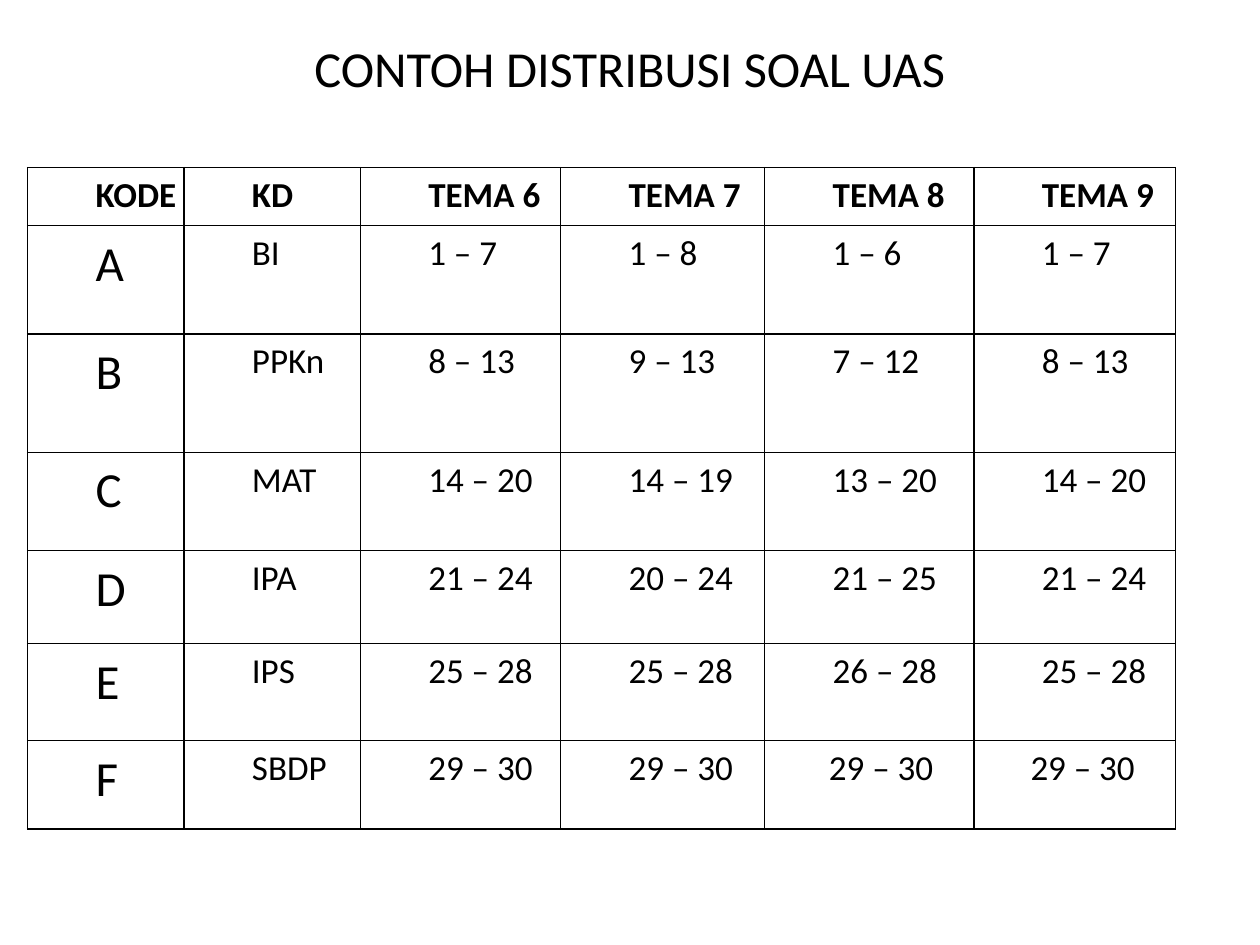
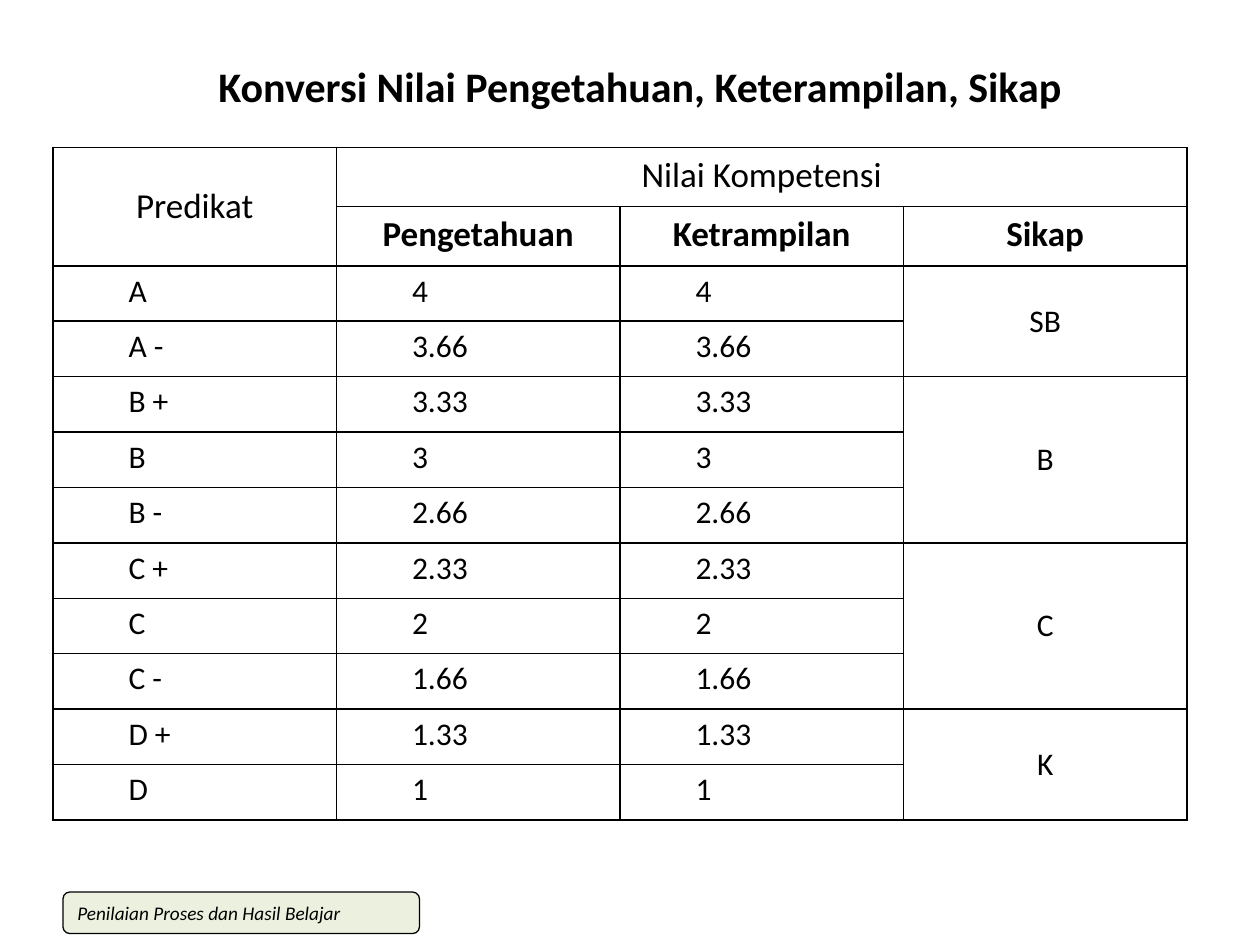
"""Build two slides with tables on exam question distribution and grade conversion."""
from lxml.etree import SubElement
from pptx import Presentation
from pptx.dml.color import RGBColor
from pptx.enum.shapes import MSO_SHAPE as Shape
from pptx.enum.text import MSO_ANCHOR as Anchor, MSO_AUTO_SIZE as AutoSize, PP_ALIGN as Align
from pptx.oxml.ns import qn
from pptx.util import Inches, Pt

FONT = "Calibri"
BLACK = "000000"
PALE_GREEN = "EBF1DE"


def paint(fill, color):
    fill.solid()
    fill.fore_color.rgb = RGBColor.from_string(color)


def write(frame, text, size, bold=False, italic=False, align=Align.LEFT, indent=0, spacing=1.0):
    para = frame.paragraphs[0]
    para.alignment = align
    para.line_spacing = spacing
    properties = para._p.get_or_add_pPr()
    properties.set("marL", str(Inches(indent)))
    properties.set("indent", "0")
    span = para.add_run()
    span.text = text
    span.font.name = FONT
    span.font.size = Pt(size)
    span.font.bold = bold
    span.font.italic = italic
    paint(span.font.fill, BLACK)


deck = Presentation()
deck.slide_width, deck.slide_height = Inches(10), Inches(7.5)

titles = [
    ("CONTOH DISTRIBUSI SOAL UAS", 28.8, False, (0.5, 0.27, 9, 0.53)),
    ("Konversi Nilai Pengetahuan, Keterampilan, Sikap", 24, True, (0.58, 0.33, 9, 0.7)),
]
pages = []
for text, size, bold, place in titles:
    page = deck.slides.add_slide(deck.slide_layouts[5])
    title = page.shapes.title
    title.left, title.top, title.width, title.height = map(Inches, place)
    title.text_frame.auto_size = AutoSize.NONE
    title.text_frame.word_wrap = True
    title.text_frame.vertical_anchor = Anchor.MIDDLE
    write(title.text_frame, text, size, bold, align=Align.CENTER)
    pages.append(page)
distribution_page, conversion_page = pages

distribution = [
    ("KODE", "KD", "TEMA 6", "TEMA 7", "TEMA 8", "TEMA 9"),
    ("A", "BI", "1 – 7", "1 – 8", "1 – 6", "1 – 7"),
    ("B", "PPKn", "8 – 13", "9 – 13", "7 – 12", "8 – 13"),
    ("C", "MAT", "14 – 20", "14 – 19", "13 – 20", "14 – 20"),
    ("D", "IPA", "21 – 24", "20 – 24", "21 – 25", "21 – 24"),
    ("E", "IPS", "25 – 28", "25 – 28", "26 – 28", "25 – 28"),
    ("F", "SBDP", "29 – 30", "29 – 30", "29 – 30", "29 – 30"),
]
shifted_indents = {(6, 4): 0.47, (6, 5): 0.41}
distribution_table = distribution_page.shapes.add_table(
    7, 6, Inches(0.22), Inches(1.33), Inches(9.11), Inches(5.25)).table
for column, width in zip(distribution_table.columns, (1.24, 1.4, 1.59, 1.62, 1.66, 1.6)):
    column.width = Inches(width)
for row, height in zip(distribution_table.rows, (0.46, 0.86, 0.94, 0.78, 0.74, 0.77, 0.7)):
    row.height = Inches(height)
for row, values in enumerate(distribution):
    for column, value in enumerate(values):
        cell = distribution_table.cell(row, column)
        cell.margin_left = cell.margin_right = Inches(0.04)
        cell.margin_top = cell.margin_bottom = 0
        size = 28 if row and column == 0 else 20
        indent = shifted_indents.get((row, column), 0.5)
        write(cell.text_frame, value, size, bold=row == 0, indent=indent, spacing=1.15)

grades = [
    ("A", "4"), ("A -", "3.66"), ("B +", "3.33"), ("B", "3"), ("B -", "2.66"),
    ("C +", "2.33"), ("C", "2"), ("C -", "1.66"), ("D +", "1.33"), ("D", "1"),
]
centred_cells = [
    (0, 0, 2, 1, "Predikat", 20, False),
    (0, 1, 1, 3, "Nilai Kompetensi", 20, False),
    (1, 1, 1, 1, "Pengetahuan", 20, True),
    (1, 2, 1, 1, "Ketrampilan", 20, True),
    (1, 3, 1, 1, "Sikap", 20, True),
    (2, 3, 2, 1, "SB", 18, False),
    (4, 3, 3, 1, "B", 18, False),
    (7, 3, 3, 1, "C", 18, False),
    (10, 3, 2, 1, "K", 18, False),
]
conversion_table = conversion_page.shapes.add_table(
    12, 4, Inches(0.42), Inches(1.17), Inches(9), Inches(5.34)).table
for index, row in enumerate(conversion_table.rows):
    row.height = Inches(0.47 if index < 2 else 0.44)
for row, column, height, width, text, size, bold in centred_cells:
    cell = conversion_table.cell(row, column)
    if height * width > 1:
        cell.merge(conversion_table.cell(row + height - 1, column + width - 1))
    if height > 1:
        cell.vertical_anchor = Anchor.MIDDLE
    write(cell.text_frame, text, size, bold, align=Align.CENTER)
for row, (grade, score) in enumerate(grades, start=2):
    for column, value in enumerate((grade, score, score)):
        write(conversion_table.cell(row, column).text_frame, value, 18, indent=0.5)

for table in (distribution_table, conversion_table):
    for cell in table.iter_cells():
        cell_properties = cell._tc.get_or_add_tcPr()
        for side in ("a:lnL", "a:lnR", "a:lnT", "a:lnB"):
            border = SubElement(cell_properties, qn(side), w=str(Pt(1)))
            border_fill = SubElement(border, qn("a:solidFill"))
            SubElement(border_fill, qn("a:srgbClr"), val=BLACK)
        cell.fill.background()

footer = conversion_page.shapes.add_shape(
    Shape.ROUNDED_RECTANGLE, Inches(0.5), Inches(7.08), Inches(2.83), Inches(0.33))
footer.shadow.inherit = False
paint(footer.fill, PALE_GREEN)
paint(footer.line.fill, BLACK)
footer.line.width = Pt(0.75)
footer.text_frame.word_wrap = True
footer.text_frame.vertical_anchor = Anchor.MIDDLE
write(footer.text_frame, "Penilaian Proses dan Hasil Belajar", 11, italic=True)

deck.save("out.pptx")
